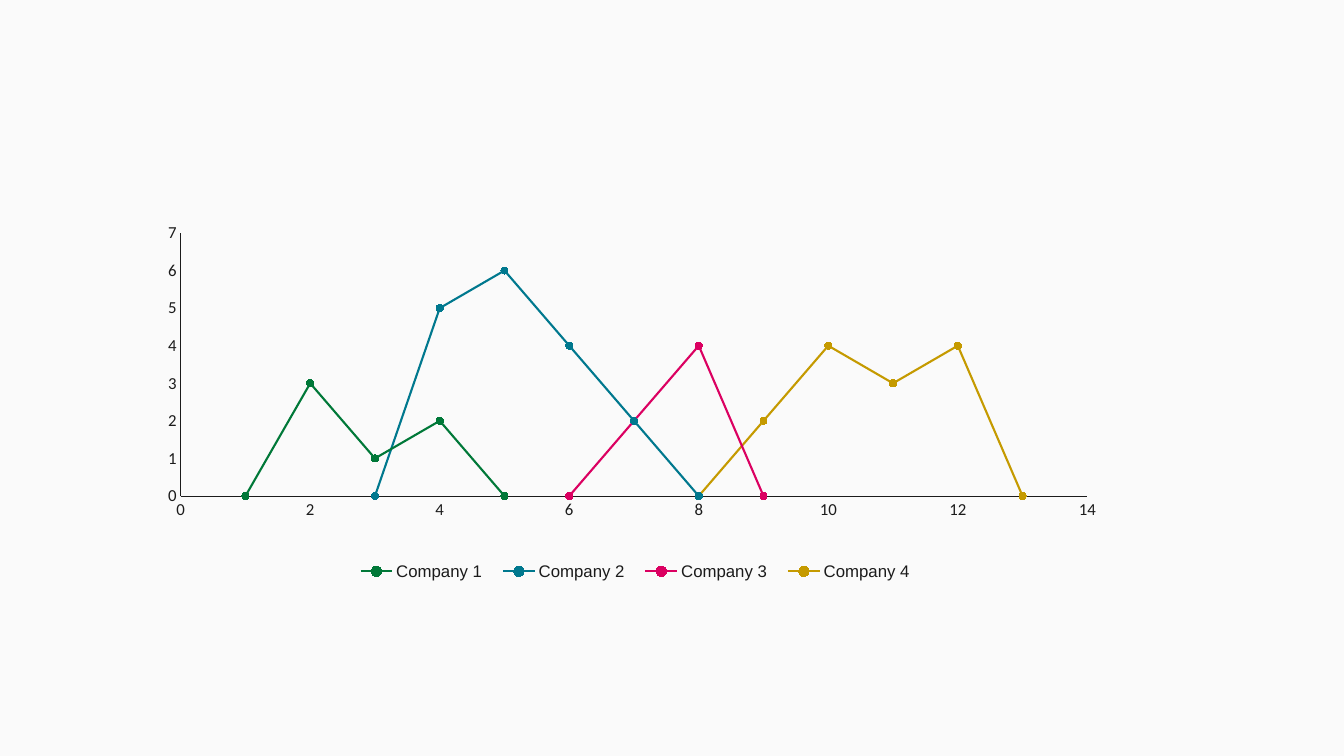
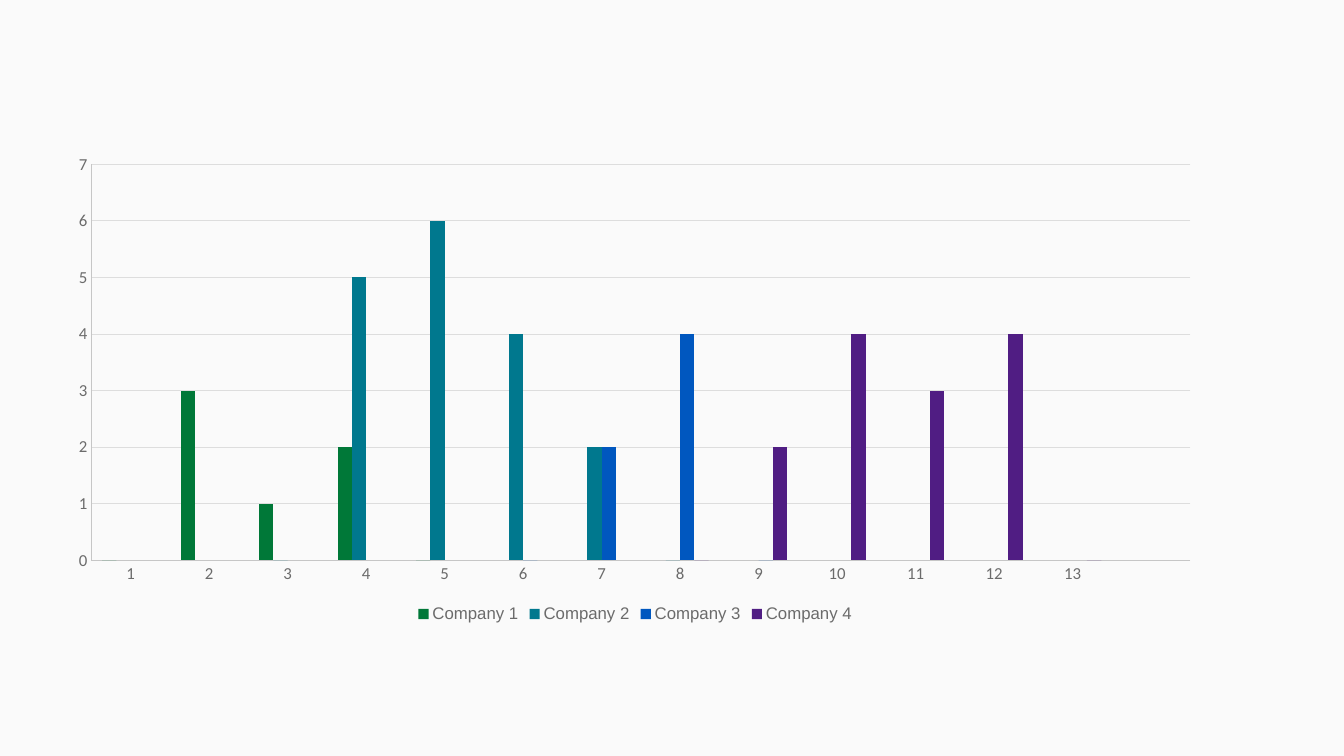
import pptx
import pptx.chart.data
import pptx.dml.color
import pptx.enum.chart
import pptx.oxml
import pptx.oxml.ns
import pptx.util

CHART_TYPE = pptx.enum.chart.XL_CHART_TYPE
POSITIONS = list(range(1, 14)) + [None]
COMPANIES = {
    "Company 1": (1, [0, 3, 1, 2, 0]),
    "Company 2": (3, [0, 5, 6, 4, 2, 0]),
    "Company 3": (6, [0, 2, 4, 0]),
    "Company 4": (8, [0, 2, 4, 3, 4, 0]),
}
THEME = {
    "background": "FAFAFA",
    "axis_font": "Calibri",
    "legend_font": "Arial",
    "text_size": 12,
    "line_width": 0.75,
    "series_width": 1.5,
    "marker_size": 5,
    "gap_width": 150,
}
SLIDE_SIZE = (13.33, 7.5)
CHART_FRAME = (0.55, 1.43, 11.5, 4.79)
UPWARD = {"minimum_scale": 0, "maximum_scale": 7, "major_unit": 1}
CHARTS = [
    {
        "type": CHART_TYPE.XY_SCATTER_LINES,
        "series_colors": ["007838", "00788E", "DB0061", "C59A00"],
        "text": "1B1B1B",
        "axis": "1B1B1B",
        "grid": None,
        "across": {"minimum_scale": 0, "maximum_scale": 14, "major_unit": 2},
        "plot_layout": (0.108, 0.184, 0.782, 0.545),
        "legend_layout": (0.25, 0.85, 0.5, 0.07),
    },
    {
        "type": CHART_TYPE.COLUMN_CLUSTERED,
        "series_colors": ["007838", "00788E", "0057BF", "501D83"],
        "text": "6B6B6B",
        "axis": "C6C6C6",
        "grid": "DDDDDD",
        "across": {},
        "plot_layout": (0.031, 0.042, 0.948, 0.82),
        "legend_layout": None,
    },
]


def rgb(value):
    return pptx.dml.color.RGBColor.from_string(value)


def apply(target, values):
    for name, value in values.items():
        setattr(target, name, value)


def style_font(font, name, color):
    apply(font, {"name": name, "size": pptx.util.Pt(THEME["text_size"])})
    font.color.rgb = rgb(color)


def style_fill(fill, color):
    fill.solid()
    fill.fore_color.rgb = rgb(color)


def style_line(line, color, width):
    line.color.rgb = rgb(color)
    line.width = pptx.util.Pt(width)


def padded_values(start, values):
    before = [None] * (start - 1)
    return before + values + [None] * (len(POSITIONS) - len(before) - len(values))


def scatter_data():
    data = pptx.chart.data.XyChartData()
    for name, (start, values) in COMPANIES.items():
        series = data.add_series(name)
        for position, value in zip(POSITIONS, padded_values(start, values)):
            series.add_data_point(position, value)
    return data


def column_data():
    data = pptx.chart.data.CategoryChartData()
    data.categories = [str(position or "") for position in POSITIONS]
    for name, (start, values) in COMPANIES.items():
        data.add_series(name, padded_values(start, values))
    return data


def remove_empty_points(chart):
    for point in list(chart.element.iter(pptx.oxml.ns.qn("c:pt"))):
        if point.findtext(pptx.oxml.ns.qn("c:v")) == "None":
            point.getparent().remove(point)


def set_layout(chart, tag, shares, index, inner=False):
    parent = chart.element.find(".//" + pptx.oxml.ns.qn(tag))
    for old in parent.findall(pptx.oxml.ns.qn("c:layout")):
        parent.remove(old)
    target = '<c:layoutTarget val="inner"/>' if inner else ""
    modes = "".join(f'<c:{side}Mode val="edge"/>' for side in "xy")
    sizes = "".join(f'<c:{side} val="{share}"/>' for side, share in zip("xywh", shares))
    parent.insert(index, pptx.oxml.parse_xml(
        f'<c:layout {pptx.oxml.ns.nsdecls("c")}><c:manualLayout>'
        f"{target}{modes}{sizes}</c:manualLayout></c:layout>"))


def style_axis(axis, design, scale, grid):
    apply(axis, {
        "major_tick_mark": pptx.enum.chart.XL_TICK_MARK.NONE,
        "minor_tick_mark": pptx.enum.chart.XL_TICK_MARK.NONE,
        "has_major_gridlines": bool(grid),
        **scale,
    })
    style_font(axis.tick_labels.font, THEME["axis_font"], design["text"])
    style_line(axis.format.line, design["axis"], THEME["line_width"])
    if grid:
        style_line(axis.major_gridlines.format.line, grid, THEME["line_width"])


def style_scatter_series(series, color):
    series.smooth = False
    style_line(series.format.line, color, THEME["series_width"])
    apply(series.marker, {
        "style": pptx.enum.chart.XL_MARKER_STYLE.CIRCLE,
        "size": THEME["marker_size"],
    })
    style_fill(series.marker.format.fill, color)
    style_line(series.marker.format.line, color, THEME["line_width"])


def add_company_chart(slide, design):
    is_scatter = design["type"] == CHART_TYPE.XY_SCATTER_LINES
    data = scatter_data() if is_scatter else column_data()
    frame = [pptx.util.Inches(length) for length in CHART_FRAME]
    chart = slide.shapes.add_chart(design["type"], *frame, data).chart
    remove_empty_points(chart)
    apply(chart, {"has_title": False, "has_legend": True})
    style_font(chart.font, THEME["axis_font"], design["text"])
    style_axis(chart.category_axis, design, design["across"], None)
    style_axis(chart.value_axis, design, UPWARD, design["grid"])

    plot = chart.plots[0]
    plot.vary_by_categories = False
    if not is_scatter:
        apply(plot, {"gap_width": THEME["gap_width"], "overlap": 0})
    for series, color in zip(plot.series, design["series_colors"]):
        if is_scatter:
            style_scatter_series(series, color)
        else:
            style_fill(series.format.fill, color)

    apply(chart.legend, {
        "position": pptx.enum.chart.XL_LEGEND_POSITION.BOTTOM,
        "include_in_layout": False,
    })
    style_font(chart.legend.font, THEME["legend_font"], design["text"])
    set_layout(chart, "c:plotArea", design["plot_layout"], 0, inner=True)
    if design["legend_layout"]:
        set_layout(chart, "c:legend", design["legend_layout"], 1)


def main():
    presentation = pptx.Presentation()
    width, height = SLIDE_SIZE
    apply(presentation, {
        "slide_width": pptx.util.Inches(width),
        "slide_height": pptx.util.Inches(height),
    })
    style_fill(presentation.slide_master.background.fill, THEME["background"])
    for design in CHARTS:
        slide = presentation.slides.add_slide(presentation.slide_layouts[6])
        add_company_chart(slide, design)
    presentation.save("out.pptx")


if __name__ == "__main__":
    main()
